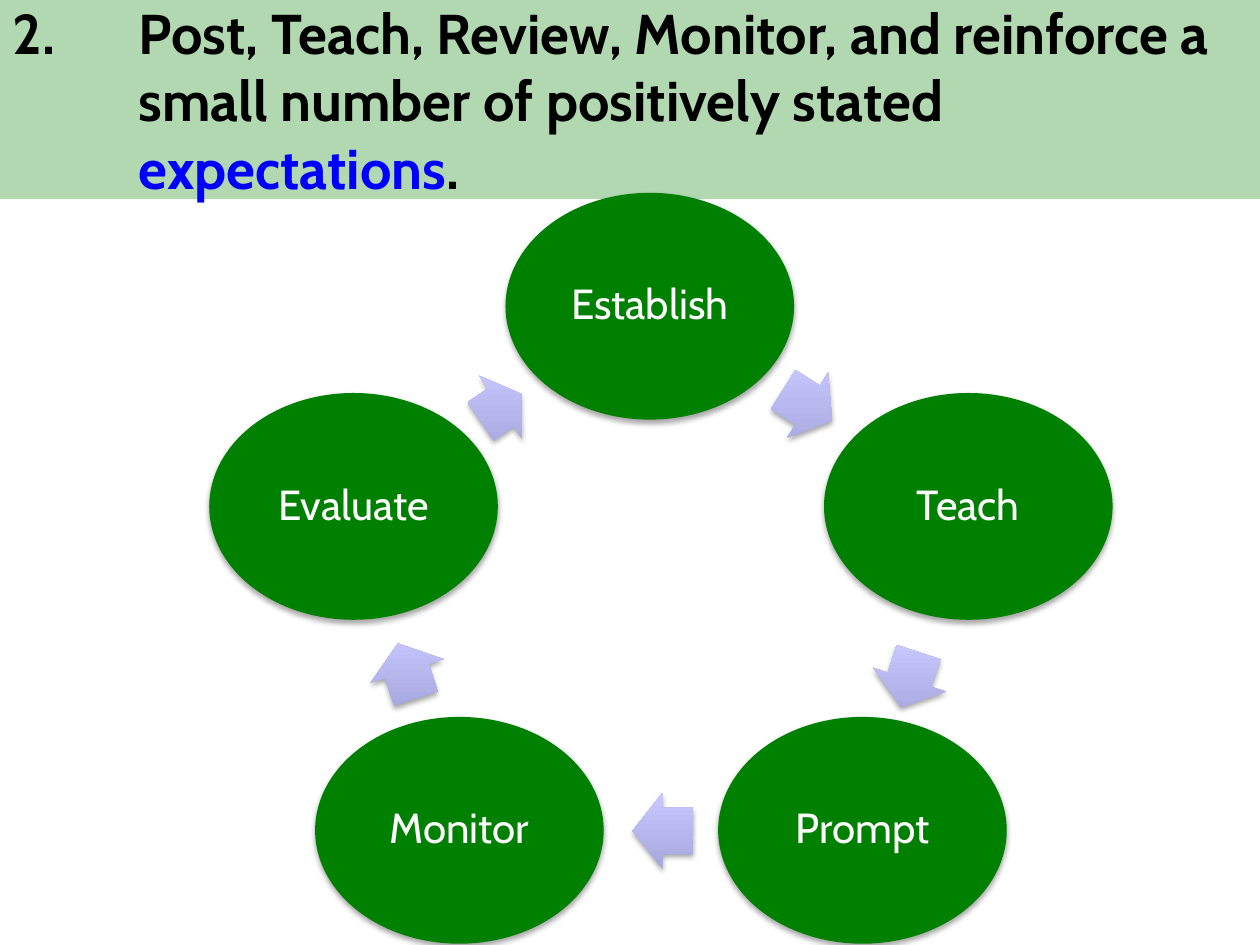
import pptx
import pptx.util
import pptx.dml.color
import pptx.enum.shapes
import pptx.enum.text
import pptx.oxml
import pptx.oxml.ns

Pt = pptx.util.Pt
RGBColor = pptx.dml.color.RGBColor
MSO_SHAPE = pptx.enum.shapes.MSO_SHAPE
PP_ALIGN = pptx.enum.text.PP_ALIGN

FONT = "Cabin"
GREEN = RGBColor(0x00, 0x80, 0x00)
BLACK = RGBColor(0x00, 0x00, 0x00)
BLUE = RGBColor(0x00, 0x00, 0xFF)
WHITE = RGBColor(0xFF, 0xFF, 0xFF)
LILAC_DARK = RGBColor(0xA7, 0xA7, 0xDF)
LILAC_LIGHT = RGBColor(0xC9, 0xC9, 0xFF)

TITLE = [
    ("2.\tPost, Teach, Review, Monitor, and reinforce a small number of positively stated ", BLACK),
    ("expectations", BLUE),
    (".", BLACK),
]
TITLE_W, TITLE_H, TITLE_INDENT = 720, 113.76, 72

STEP_W, STEP_H = 164.88, 129.6
STEPS = [
    ("Establish", 371.3, 175),
    ("Teach", 553.3, 289.4),
    ("Prompt", 492.8, 474.5),
    ("Monitor", 262.5, 474.5),
    ("Evaluate", 202, 289.4),
]

ARROW_H = 43.92
ARROWS = [
    (461.5, 231.5, 33.1, 32.2),
    (519.8, 388.4, 33.1, 108),
    (378.7, 474.8, 34.6, 180),
    (232.6, 383.4, 33.1, 252),
    (286.2, 232.9, 28.1, 325.9),
]


def add_text(p, text, size=24, color=WHITE, bold=False):
    r = p.add_run()
    r.text = text
    r.font.name = FONT
    r.font.size = Pt(size)
    r.font.bold = bold
    r.font.color.rgb = color
    return r


def add_centred(s, kind, cx, cy, w, h):
    sp = s.shapes.add_shape(kind, Pt(cx - w / 2), Pt(cy - h / 2), Pt(w), Pt(h))
    sp.line.fill.background()
    sp.shadow.inherit = False
    effects = sp._element.spPr.find(pptx.oxml.ns.qn("a:effectLst"))
    effects.append(pptx.oxml.parse_xml(
        f'<a:outerShdw {pptx.oxml.ns.nsdecls("a")} blurRad="{Pt(3.1)}" dist="{Pt(1.8)}" '
        'dir="5400000" rotWithShape="0"><a:srgbClr val="000000">'
        '<a:alpha val="35000"/></a:srgbClr></a:outerShdw>'))
    return sp


def add_title(s):
    sp = s.shapes.title
    sp.left, sp.top, sp.width, sp.height = 0, 0, Pt(TITLE_W), Pt(TITLE_H)
    sp.fill.solid()
    sp.fill.fore_color.rgb = GREEN
    color = sp._element.spPr.find(".//" + pptx.oxml.ns.qn("a:srgbClr"))
    color.append(pptx.oxml.parse_xml(f'<a:alpha {pptx.oxml.ns.nsdecls("a")} val="30000"/>'))
    tf = sp.text_frame
    tf.auto_size = pptx.enum.text.MSO_AUTO_SIZE.NONE
    tf.vertical_anchor = pptx.enum.text.MSO_ANCHOR.MIDDLE
    p = tf.paragraphs[0]
    p.alignment = PP_ALIGN.LEFT
    pPr = p._p.get_or_add_pPr()
    pPr.set("marL", str(Pt(TITLE_INDENT)))
    pPr.set("indent", str(-Pt(TITLE_INDENT)))
    for text, color in TITLE:
        add_text(p, text, size=32, color=color, bold=True)


def add_step(s, text, cx, cy):
    sp = add_centred(s, MSO_SHAPE.OVAL, cx, cy, STEP_W, STEP_H)
    sp.fill.solid()
    sp.fill.fore_color.rgb = GREEN
    tf = sp.text_frame
    tf.margin_left = tf.margin_right = tf.margin_top = tf.margin_bottom = Pt(2)
    tf.vertical_anchor = pptx.enum.text.MSO_ANCHOR.MIDDLE
    p = tf.paragraphs[0]
    p.alignment = PP_ALIGN.CENTER
    p.line_spacing = 0.9
    add_text(p, text)


def add_arrow(s, cx, cy, w, angle):
    sp = add_centred(s, MSO_SHAPE.RIGHT_ARROW, cx, cy, w, ARROW_H)
    sp.rotation = angle
    sp.adjustments[0] = 0.6
    sp.adjustments[1] = 0.5
    sp.fill.gradient()
    sp.fill.gradient_angle = 90
    for stop, color in zip(sp.fill.gradient_stops, (LILAC_DARK, LILAC_LIGHT)):
        stop.color.rgb = color
    sp._element.spPr.find(pptx.oxml.ns.qn("a:gradFill")).set("rotWithShape", "0")


def main():
    prs = pptx.Presentation()
    prs.slide_width, prs.slide_height = Pt(720), Pt(540)
    s = prs.slides.add_slide(prs.slide_layouts[5])
    add_title(s)
    for step, arrow in zip(STEPS, ARROWS):
        add_step(s, *step)
        add_arrow(s, *arrow)
    prs.save("out.pptx")


if __name__ == "__main__":
    main()
